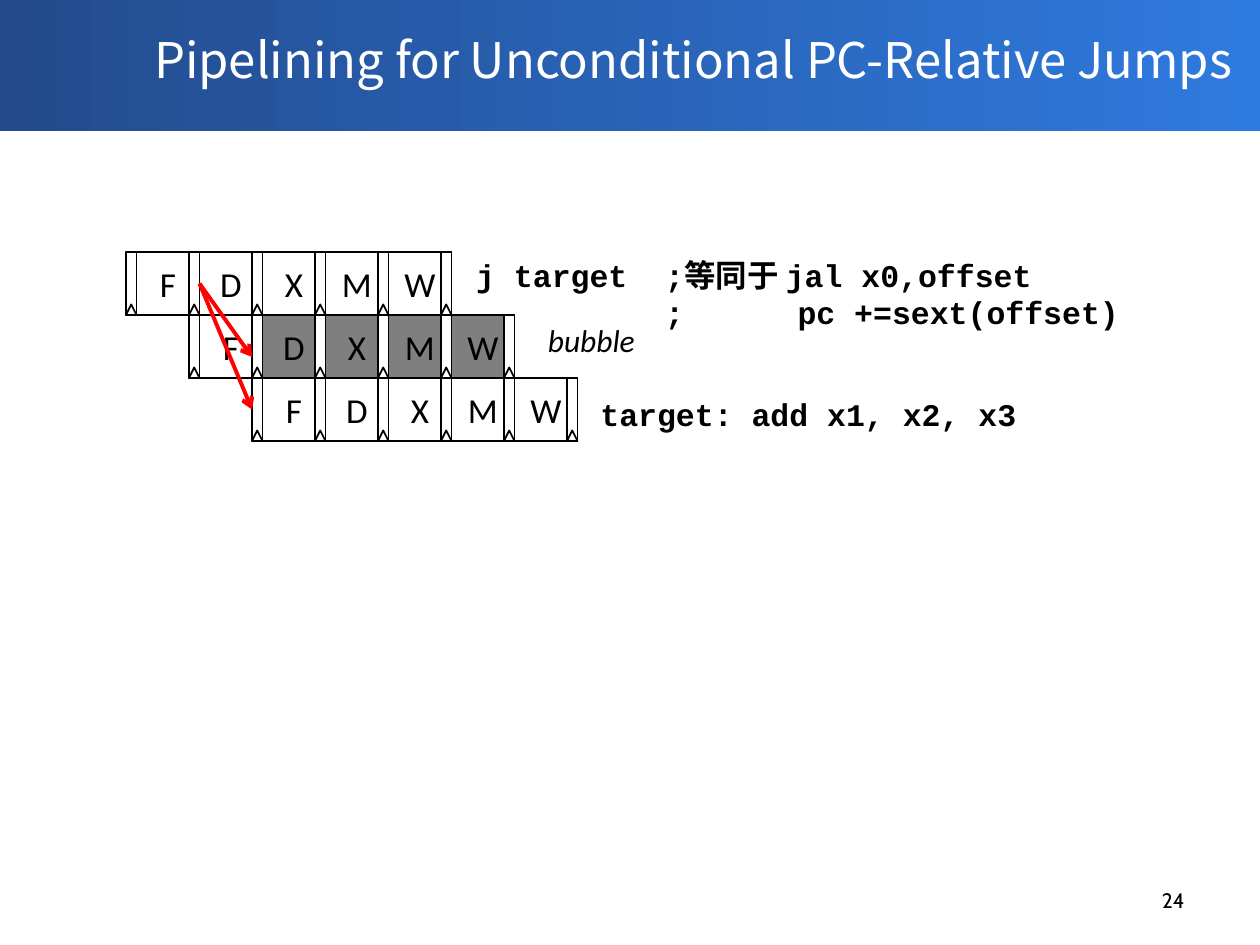
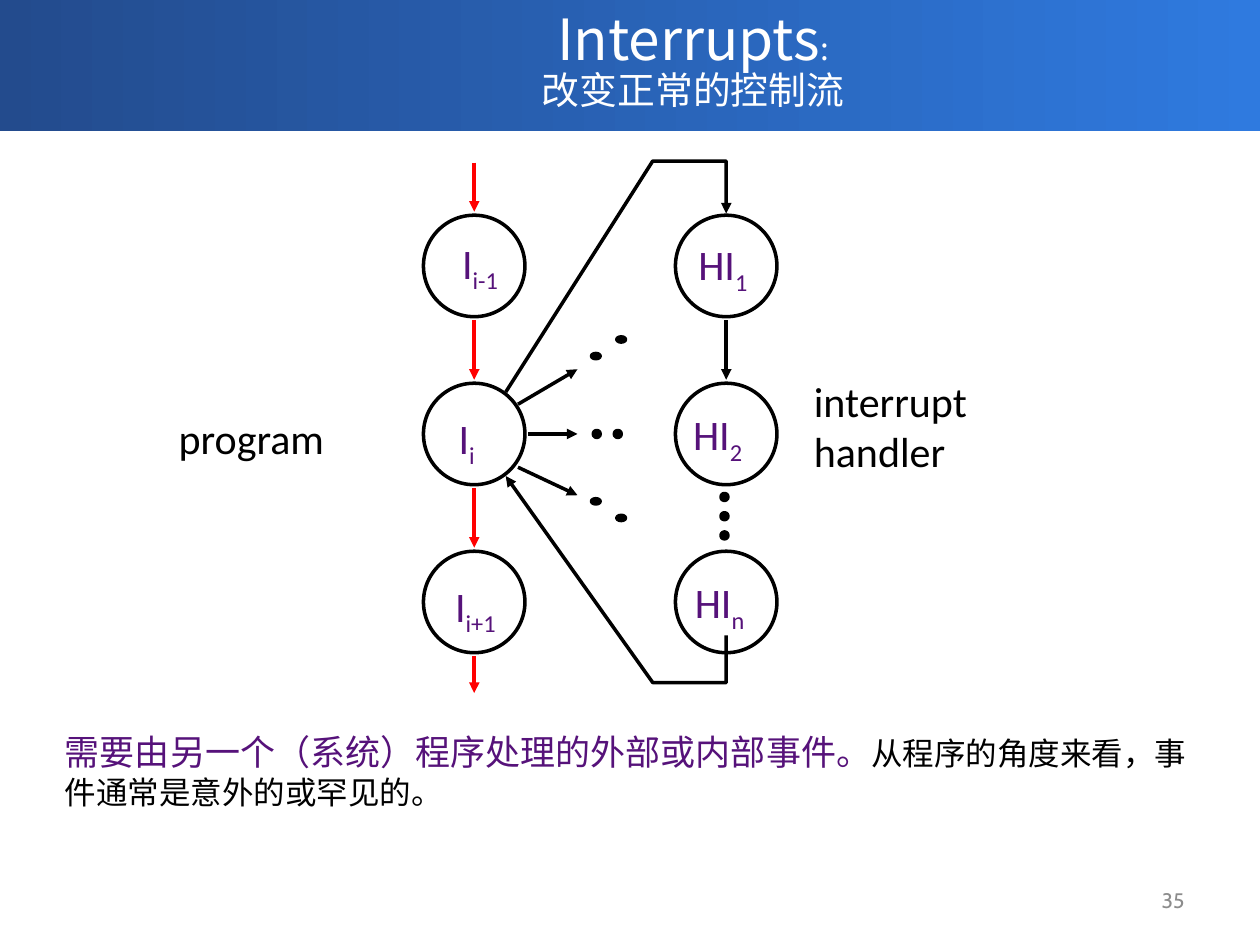
"""Build two slides on pipelined jumps and on interrupts."""
from lxml import etree
from pptx import Presentation
from pptx.dml.color import RGBColor
from pptx.enum.shapes import MSO_CONNECTOR, MSO_SHAPE
from pptx.enum.text import MSO_ANCHOR, MSO_AUTO_SIZE, PP_ALIGN
from pptx.oxml.ns import qn
from pptx.util import Pt

BLACK = RGBColor(0x00, 0x00, 0x00)
WHITE = RGBColor(0xFF, 0xFF, 0xFF)
RED = RGBColor(0xFF, 0x00, 0x00)
PURPLE = RGBColor(0x56, 0x12, 0x7A)
STALL_GRAY = RGBColor(0x7F, 0x7F, 0x7F)
NUMBER_GRAY = RGBColor(0x8C, 0x8C, 0x8C)
BAND_DARK = RGBColor(0x23, 0x4B, 0x8D)
BAND_LIGHT = RGBColor(0x2F, 0x7A, 0xDF)
CJK, SANS, CODE, CABIN = "Noto Sans CJK SC", "Calibri", "Courier New", "Cabin"


class Deck:
    def __init__(self):
        self.prs = Presentation()
        self.prs.slide_width, self.prs.slide_height = Pt(720), Pt(540)
        self.layout = self.prs.slide_layouts[5]
        self.s = None

    def slide(self, title_runs, number, number_color):
        self.s = self.prs.slides.add_slide(self.layout)
        if len(self.prs.slides) == 1:
            self.band()
        title = self.s.shapes.title
        title.left, title.top, title.width, title.height = Pt(72), Pt(0), Pt(648), Pt(71)
        tf = title.text_frame
        tf.auto_size = MSO_AUTO_SIZE.NONE
        tf.vertical_anchor = MSO_ANCHOR.MIDDLE
        p = tf.paragraphs[0]
        p.alignment = PP_ALIGN.CENTER
        p.line_spacing = 0.9
        self.style(p, CJK, title_runs[0][1], WHITE)
        for text, size in title_runs:
            if text:
                self.run(p, text, size)
            else:
                p.add_line_break()
        tf = self.text((516, 500, 168, 29), [str(number)], 12, number_color, CABIN)
        tf.vertical_anchor = MSO_ANCHOR.MIDDLE
        tf.paragraphs[0].alignment = PP_ALIGN.RIGHT

    def band(self):
        sp = self.shape(MSO_SHAPE.RECTANGLE, (0, -2, 720, 77), line=None)
        sp.fill.gradient()
        sp.fill.gradient_angle = 0
        for stop, color in zip(sp.fill.gradient_stops, (BAND_DARK, BAND_LIGHT)):
            stop.color.rgb = color
        self.layout.shapes._spTree.insert(2, sp._element)

    def style(self, p, name, size, color, bold=False, italic=False):
        font = p.font
        font.name, font.size, font.bold, font.italic = name, Pt(size), bold, italic
        font.color.rgb = color
        props = p._p.pPr.find(qn("a:defRPr"))
        etree.SubElement(props, qn("a:ea"), typeface=CJK)

    def run(self, p, text, size=None, color=None, font=None, subscript=False):
        r = p.add_run()
        r.text = text
        if size:
            r.font.size = Pt(size)
        if color is not None:
            r.font.color.rgb = color
        if font:
            r.font.name = font
        if subscript:
            r._r.get_or_add_rPr().set("baseline", "-25000")

    def text(self, box, lines, size, color=BLACK, font=SANS, wrap=False, **look):
        tf = self.s.shapes.add_textbox(*map(Pt, box)).text_frame
        tf.word_wrap = wrap
        for i, line in enumerate(lines):
            p = tf.add_paragraph() if i else tf.paragraphs[0]
            self.style(p, font, size, color, **look)
            self.run(p, line)
        return tf

    def shape(self, kind, box, fill=None, line=1):
        sp = self.s.shapes.add_shape(kind, *map(Pt, box))
        self.paint(sp, fill, line)
        return sp

    def paint(self, sp, fill, line):
        sp.shadow.inherit = False
        if fill is None:
            sp.fill.background()
        else:
            sp.fill.solid()
            sp.fill.fore_color.rgb = fill
        if line is None:
            sp.line.fill.background()
        else:
            sp.line.color.rgb = BLACK
            sp.line.width = Pt(line)

    def arrowhead(self, sp, end="tailEnd", kind="triangle"):
        etree.SubElement(sp._element.spPr.find(qn("a:ln")), qn(f"a:{end}"), type=kind)

    def arrow(self, start, end, color=BLACK, width=2, kind="triangle"):
        cn = self.s.shapes.add_connector(MSO_CONNECTOR.STRAIGHT, *map(Pt, start + end))
        cn.line.color.rgb = color
        cn.line.width = Pt(width)
        self.arrowhead(cn, kind=kind)
        etree.SubElement(cn._element.spPr, qn("a:effectLst"))

    def bent_arrow(self, points, end):
        first, *rest = [(Pt(x), Pt(y)) for x, y in points]
        builder = self.s.shapes.build_freeform(*first)
        builder.add_line_segments(rest, close=False)
        sp = builder.convert_to_shape()
        self.paint(sp, None, 2)
        self.arrowhead(sp, end)

    def stage(self, x, y, letter, fill):
        sp = self.shape(MSO_SHAPE.RECTANGLE, (x, y, 36, 36), fill)
        tf = sp.text_frame
        tf.margin_left = tf.margin_right = tf.margin_top = tf.margin_bottom = 0
        tf.vertical_anchor = MSO_ANCHOR.MIDDLE
        p = tf.paragraphs[0]
        p.alignment = PP_ALIGN.CENTER
        self.style(p, SANS, 20, BLACK)
        self.run(p, letter)

    def register(self, x, y):
        self.shape(MSO_SHAPE.RECTANGLE, (x, y, 6, 36), WHITE)
        self.shape(MSO_SHAPE.ISOSCELES_TRIANGLE, (x, y + 30, 6, 6), WHITE)

    def instruction(self, row, stalled=""):
        x, y = 72 + 36 * row, 144 + 36 * row
        for i, letter in enumerate("FDXMW"):
            self.stage(x + 6 + 36 * i, y, letter, STALL_GRAY if letter in stalled else WHITE)
        for i in range(6):
            self.register(x + 36 * i, y)

    def node_label(self, x, y, width, name, index):
        tf = self.text((x, y, width, 36), [name], 24, PURPLE)
        self.run(tf.paragraphs[0], index, subscript=True)

    def dots(self, centers, width, height):
        for x, y in centers:
            box = (x - width / 2, y - height / 2, width, height)
            self.shape(MSO_SHAPE.OVAL, box, BLACK, 2)


def jump_slide(deck):
    deck.slide([("Pipelining for Unconditional PC-Relative Jumps", 28)], 24, BLACK)
    for row, stalled in enumerate(("", "DXMW", "")):
        deck.instruction(row, stalled)
    code = ["j target  ;等同于 jal x0,offset", "          ;      pc +=sext(offset)"]
    deck.text((265, 142.5, 394.5, 51), code, 18, font=CODE, bold=True)
    deck.text((336, 222, 254, 29), ["target: add x1, x2, x3"], 18, font=CODE, bold=True)
    deck.text((306, 180, 69, 29), ["bubble"], 18, italic=True)
    for y in (234, 204):
        deck.arrow((114, 162), (144, y), RED, 2.25, "arrow")


def interrupt_slide(deck):
    deck.slide([("Interrupts", 32.4), (":", 18), (None, 18), ("改变正常的控制流", 21.6)],
               35, NUMBER_GRAY)
    program_x, handler_x = 271, 415
    node_top, node_step, node_size = 123, 96, 58
    for x in (program_x, handler_x):
        for i in range(3):
            top = node_top + node_step * i
            deck.shape(MSO_SHAPE.OVAL, (x - node_size / 2, top, node_size, node_size), line=2)
    for top, bottom in ((93, 121), (183, 217), (279, 313), (375, 396)):
        deck.arrow((program_x, top), (program_x, bottom), RED)
    deck.arrow((handler_x, 183), (handler_x, 217))
    for start, end in (((296, 231), (330, 211)), ((302, 248), (330, 248)),
                       ((296, 267), (330, 283))):
        deck.arrow(start, end)
    deck.bent_arrow([(289, 224), (373, 92), (handler_x, 92), (handler_x, 122)], "tailEnd")
    deck.bent_arrow([(289, 272), (373, 390), (handler_x, 390), (handler_x, 363)], "headEnd")
    deck.dots([(340.5, 203.5), (355, 194), (340.5, 286.5), (355, 296)], 5, 3)
    deck.dots([(341, 248), (353, 248)], 4, 4)
    deck.dots([(414, 284 + 11 * i) for i in range(3)], 4, 4)
    for label in ((257, 132, 37, "I", "i-1"), (255, 232, 25, "I", "i"),
                  (253, 328, 40, "I", "i+1"), (392, 133, 44, "HI", "1"),
                  (389, 230, 44, "HI", "2"), (390, 326, 44, "HI", "n")):
        deck.node_label(*label)
    deck.text((95, 232, 99, 36), ["program"], 24)
    deck.text((458, 211, 103, 65), ["interrupt", "handler"], 24)
    tf = deck.text((30, 414, 660, 53), ["需要由另一个（系统）程序处理的外部或内部事件。"],
                   20, PURPLE, wrap=True)
    deck.run(tf.paragraphs[0], "从程序的角度来看，事件通常是意外的或罕见的。", 18, BLACK, CABIN)


def main():
    deck = Deck()
    jump_slide(deck)
    interrupt_slide(deck)
    deck.prs.save("out.pptx")


if __name__ == "__main__":
    main()
